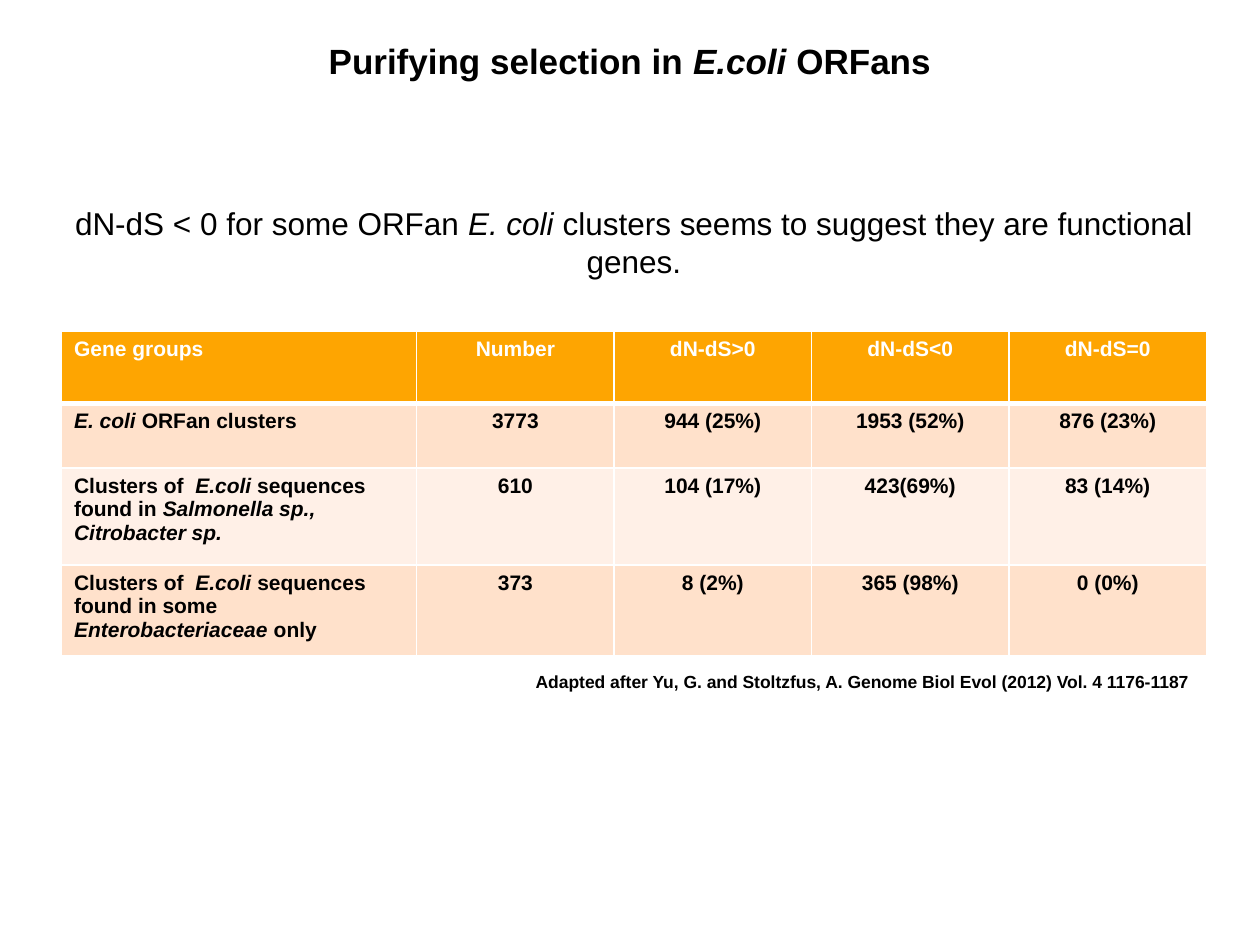
from dataclasses import dataclass

from lxml.etree import SubElement
from pptx import Presentation
from pptx.dml.color import RGBColor
from pptx.enum.text import MSO_ANCHOR, PP_ALIGN
from pptx.oxml.ns import qn
from pptx.util import Cm, Pt

COLORS = {
    "text": "000000",
    "white": "FFFFFF",
    "header": "FEA501",
    "band": "FFE1CB",
    "light_band": "FFF0E7",
}


@dataclass(frozen=True)
class TextStyle:
    size: int
    bold: bool = True
    color: str = "text"
    align: PP_ALIGN = PP_ALIGN.CENTER
    line_spacing: float = 1.0


@dataclass(frozen=True)
class TextBlock:
    text: str
    left: float
    top: float
    width: float
    height: float
    style: TextStyle
    side_margin: float = 0.25
    anchor: MSO_ANCHOR = MSO_ANCHOR.TOP


@dataclass(frozen=True)
class TableRow:
    texts: tuple[str, ...]
    height: float
    fill: str
    color: str = "text"
    top_border: int = 1
    bottom_border: int = 1


TEXT_BLOCKS = [
    TextBlock("Purifying selection in *E.coli* ORFans", 0.86, 0.76, 23.67, 1.8,
              TextStyle(20, line_spacing=0.9), side_margin=0),
    TextBlock("dN-dS < 0 for some ORFan *E. coli *clusters seems to suggest "
              "they are functional genes.", 0.46, 3.99, 24.64, 1.8,
              TextStyle(18, bold=False)),
    TextBlock("Adapted after Yu, G. and Stoltzfus, A. Genome Biol Evol (2012) Vol. 4 1176-1187 ",
              10.03, 13.39, 14.27, 0.69, TextStyle(10, align=PP_ALIGN.RIGHT),
              anchor=MSO_ANCHOR.MIDDLE),
]

TABLE_LEFT, TABLE_TOP = 1.24, 6.68
COLUMN_WIDTHS = [7.16] + [3.98] * 4
TABLE_ROWS = [
    TableRow(("Gene groups", "Number", "dN-dS>0", "dN-dS<0", "dN-dS=0"),
             1.45, "header", color="white", bottom_border=3),
    TableRow(("*E. coli *ORFan clusters", "3773", "944 (25%)", "1953 (52%)", "876 (23%)"),
             1.3, "band", top_border=3),
    TableRow(("Clusters of  *E.coli* sequences found in *Salmonella sp., Citrobacter sp.*",
              "610", "104 (17%)", "423(69%)", "83 (14%)"), 1.96, "light_band"),
    TableRow(("Clusters of  *E.coli *sequences found in some *Enterobacteriaceae *only",
              "373", "8 (2%)", "365 (98%)", "0 (0%)"), 1.83, "band"),
]


def set_attributes(target, values: dict) -> None:
    for name, value in values.items():
        setattr(target, name, value)


def write_text(text_frame, text: str, style: TextStyle) -> None:
    paragraph = text_frame.paragraphs[0]
    set_attributes(paragraph, {"alignment": style.align, "line_spacing": style.line_spacing})
    for index, part in enumerate(text.split("*")):
        if part:
            run = paragraph.add_run()
            run.text = part
            set_attributes(run.font, {"name": "Arial", "size": Pt(style.size),
                                      "bold": style.bold, "italic": index % 2 == 1})
            run.font.color.rgb = RGBColor.from_string(COLORS[style.color])


def add_text_block(slide, block: TextBlock) -> None:
    shape = slide.shapes.add_textbox(Cm(block.left), Cm(block.top),
                                     Cm(block.width), Cm(block.height))
    set_attributes(shape.text_frame, {
        "word_wrap": True,
        "vertical_anchor": block.anchor,
        "margin_left": Cm(block.side_margin),
        "margin_right": Cm(block.side_margin),
    })
    write_text(shape.text_frame, block.text, block.style)


def set_borders(cell, row: TableRow) -> None:
    properties = cell._tc.get_or_add_tcPr()
    widths = {"a:lnL": 1, "a:lnR": 1, "a:lnT": row.top_border, "a:lnB": row.bottom_border}
    for position, (tag, width) in enumerate(widths.items()):
        line = SubElement(properties, qn(tag), w=str(Pt(width)))
        fill = SubElement(line, qn("a:solidFill"))
        SubElement(fill, qn("a:srgbClr"), val=COLORS["white"])
        properties.insert(position, line)


def add_gene_table(slide, rows: list[TableRow]) -> None:
    frame = slide.shapes.add_table(
        len(rows), len(COLUMN_WIDTHS), Cm(TABLE_LEFT), Cm(TABLE_TOP),
        Cm(sum(COLUMN_WIDTHS)), Cm(sum(row.height for row in rows)))
    table = frame.table
    for column, width in zip(table.columns, COLUMN_WIDTHS):
        column.width = Cm(width)
    for row_index, row in enumerate(rows):
        table.rows[row_index].height = Cm(row.height)
        for column_index, text in enumerate(row.texts):
            cell = table.cell(row_index, column_index)
            cell.fill.solid()
            cell.fill.fore_color.rgb = RGBColor.from_string(COLORS[row.fill])
            set_borders(cell, row)
            align = PP_ALIGN.CENTER if column_index else PP_ALIGN.LEFT
            write_text(cell.text_frame, text, TextStyle(12, color=row.color, align=align))


def main() -> None:
    presentation = Presentation()
    set_attributes(presentation, {"slide_width": Cm(25.4), "slide_height": Cm(19.05)})
    slide = presentation.slides.add_slide(presentation.slide_layouts[6])
    for block in TEXT_BLOCKS:
        add_text_block(slide, block)
    add_gene_table(slide, TABLE_ROWS)
    presentation.save("out.pptx")


if __name__ == "__main__":
    main()
